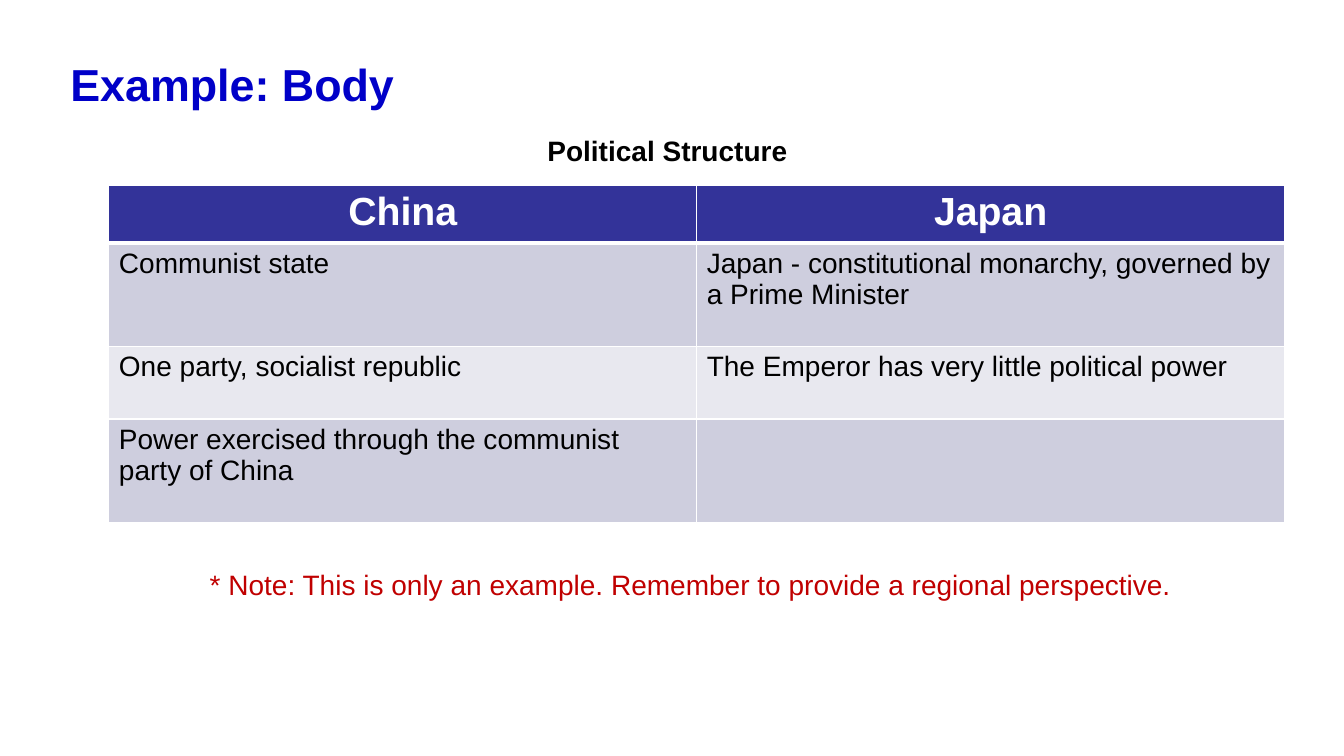
from lxml import etree
from pptx import Presentation
from pptx.dml.color import RGBColor
from pptx.enum.text import MSO_ANCHOR, PP_ALIGN
from pptx.oxml.ns import qn
from pptx.util import Inches, Pt

CENTER, LEFT = PP_ALIGN.CENTER, PP_ALIGN.LEFT
TOP, MIDDLE = MSO_ANCHOR.TOP, MSO_ANCHOR.MIDDLE

BLUE = RGBColor(0x00, 0x00, 0xC8)
BLACK = RGBColor(0x00, 0x00, 0x00)
WHITE = RGBColor(0xFF, 0xFF, 0xFF)
RED = RGBColor(0xC0, 0x00, 0x00)
INDIGO = RGBColor(0x33, 0x33, 0x99)
BANDS = [RGBColor(0xCE, 0xCE, 0xDE), RGBColor(0xE8, 0xE8, 0xEF)]

TITLE = "Example: Body"
SUBTITLE = "Political Structure"
NOTE = "* Note: This is only an example. Remember to provide a regional perspective."
COUNTRIES = [
    ("China", "Japan"),
    ("Communist state",
     "Japan - constitutional monarchy, governed by a Prime Minister"),
    ("One party, socialist republic",
     "The Emperor has very little political power"),
    ("Power exercised through the communist party of China", ""),
]
ROW_HEIGHTS = [0.54, 1.03, 0.72, 1.03]
COLUMN_WIDTH = 5.83
TABLE_LEFT, TABLE_TOP = 1.08, 1.84


def write(frame, text, size=20, color=BLACK, bold=False, align=LEFT):
    para = frame.paragraphs[0]
    para.alignment = align
    span = para.add_run()
    span.text = text
    span.font.name = "Arial"
    span.font.size = Pt(size)
    span.font.bold = bold
    span.font.color.rgb = color


def add_text(page, text, left, top, width, height, anchor=TOP, **style):
    box = page.shapes.add_textbox(*map(Inches, (left, top, width, height)))
    frame = box.text_frame
    frame.word_wrap = True
    frame.vertical_anchor = anchor
    write(frame, text, align=CENTER if "align" not in style else style.pop("align"), **style)


def set_borders(cell, above, below):
    """Draw white cell edges; above and below are widths in points."""
    properties = cell._tc.get_or_add_tcPr()
    edges = [("a:lnL", 1), ("a:lnR", 1), ("a:lnT", above), ("a:lnB", below)]
    for position, (tag, width) in enumerate(edges):
        line = etree.Element(qn(tag), w=str(Pt(width)))
        fill = etree.SubElement(line, qn("a:solidFill"))
        etree.SubElement(fill, qn("a:srgbClr"), val=str(WHITE))
        properties.insert(position, line)


def add_comparison(page):
    rows, columns = len(COUNTRIES), len(COUNTRIES[0])
    table = page.shapes.add_table(
        rows, columns, Inches(TABLE_LEFT), Inches(TABLE_TOP),
        Inches(COLUMN_WIDTH * columns), Inches(sum(ROW_HEIGHTS))).table
    for column in table.columns:
        column.width = Inches(COLUMN_WIDTH)
    for r, (texts, height) in enumerate(zip(COUNTRIES, ROW_HEIGHTS)):
        table.rows[r].height = Inches(height)
        header = r == 0
        for c, text in enumerate(texts):
            cell = table.cell(r, c)
            cell.fill.solid()
            cell.fill.fore_color.rgb = INDIGO if header else BANDS[(r - 1) % 2]
            set_borders(cell, above=3 if r == 1 else 1, below=3 if header else 1)
            if header:
                write(cell.text_frame, text, size=28, color=WHITE, bold=True, align=CENTER)
            elif text:
                write(cell.text_frame, text)


def main():
    deck = Presentation()
    deck.slide_width, deck.slide_height = Inches(13.33), Inches(7.5)
    page = deck.slides.add_slide(deck.slide_layouts[6])
    add_text(page, TITLE, 0.6, 0.47, 12.04, 0.71, anchor=MIDDLE,
             size=32, color=BLUE, bold=True, align=LEFT)
    add_text(page, SUBTITLE, 0.6, 1.28, 12.04, 0.71, bold=True)
    add_comparison(page)
    add_text(page, NOTE, TABLE_LEFT, 5.58, 11.54, 0.44, color=RED)
    deck.save("out.pptx")


if __name__ == "__main__":
    main()
